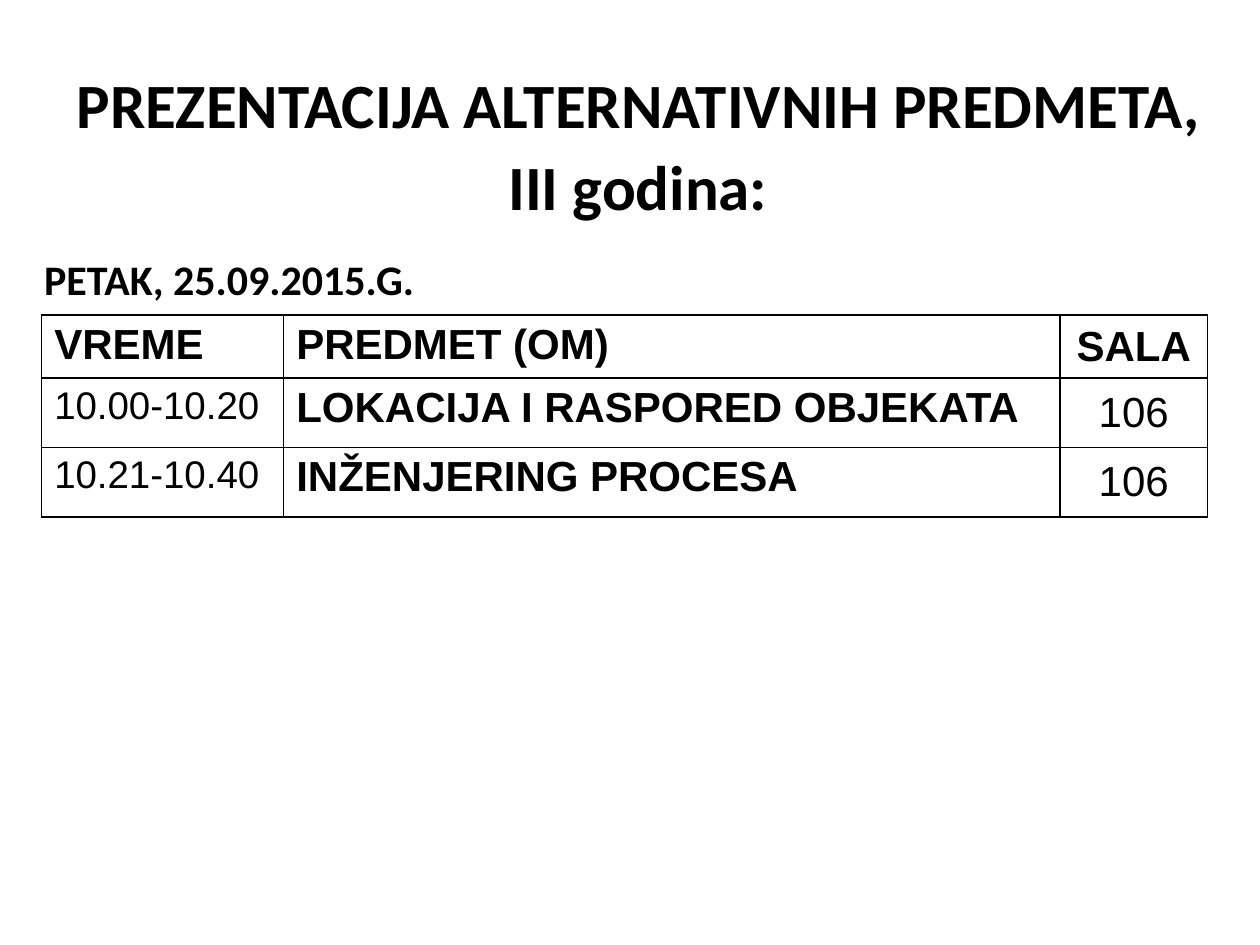
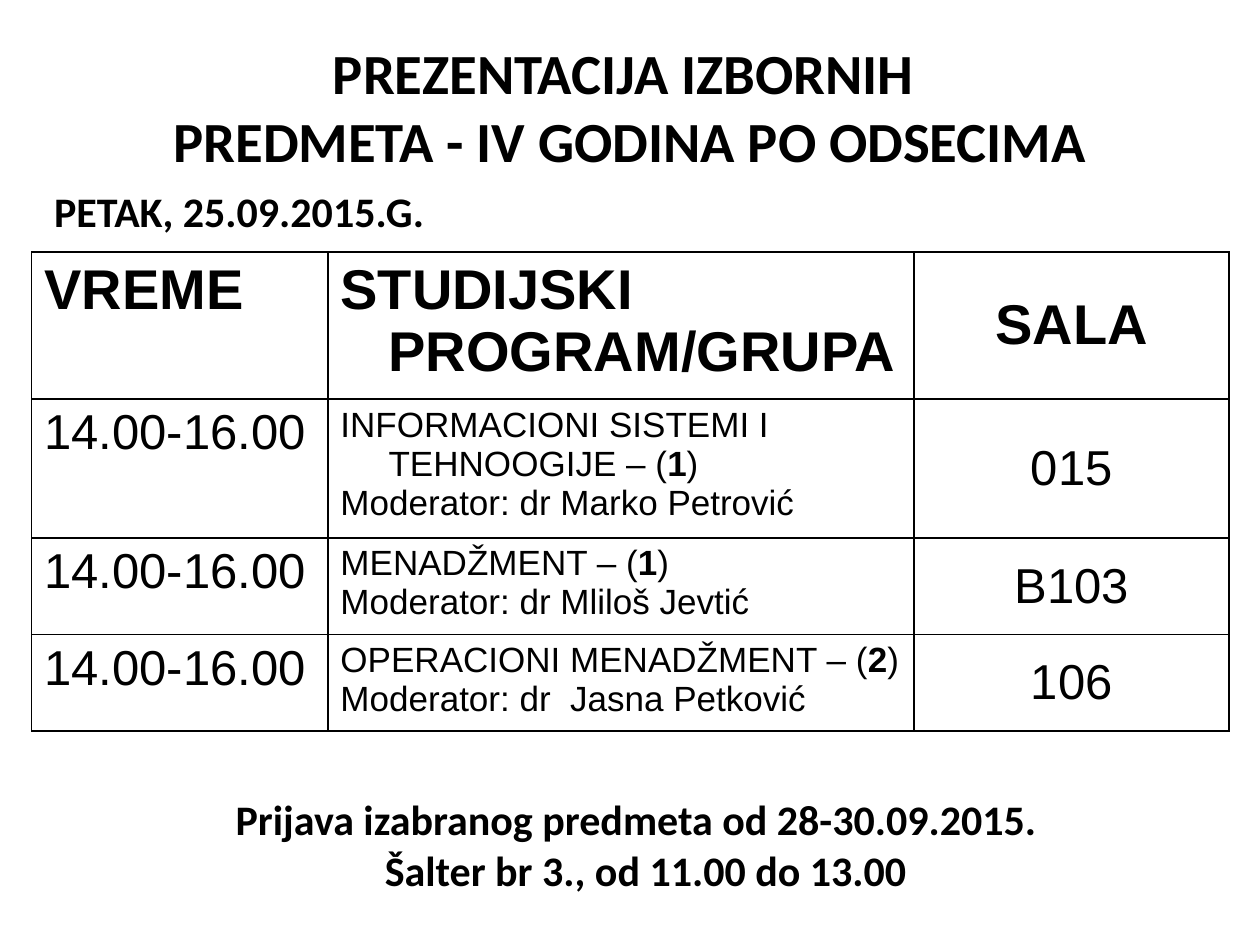
from dataclasses import dataclass

from lxml import etree
from pptx import Presentation
from pptx.dml.color import RGBColor
from pptx.enum.text import MSO_ANCHOR, PP_ALIGN
from pptx.oxml.ns import qn
from pptx.util import Cm, Pt

BLACK = RGBColor(0, 0, 0)
WHITE = RGBColor(255, 255, 255)
LEFT, CENTER = PP_ALIGN.LEFT, PP_ALIGN.CENTER
TOP, MIDDLE = MSO_ANCHOR.TOP, MSO_ANCHOR.MIDDLE
HEAD_FONT, GRID_FONT = "Calibri", "Arial"
DATE = "PETAK, 25.09.2015.G."


@dataclass
class Style:
    size: float
    bold: bool = True
    font: str = GRID_FONT
    align: int = LEFT
    anchor: int = TOP
    hang: float = 0


@dataclass
class Box:
    """Place and size in centimetres."""
    left: float
    top: float
    width: float
    height: float


@dataclass
class Grid:
    left: float
    top: float
    cols: list[float]
    rows: list[float]
    head: float              # size of the header row
    body: list[Style]        # style of each column below the header
    cells: list[list[str]]
    hang: float = 0


def write(frame, text: str, style: Style) -> None:
    """Fill a frame: \\n starts a paragraph, \\v a line, *stars* mark bold."""
    frame.word_wrap = True
    frame.vertical_anchor = style.anchor
    for num, part in enumerate(text.split("\n")):
        para = frame.add_paragraph() if num else frame.paragraphs[0]
        para.alignment = style.align
        para.font.name, para.font.size = style.font, Pt(style.size)
        para.font.bold = style.bold
        para.font.color.rgb = BLACK
        if style.hang:
            props = para._p.get_or_add_pPr()
            props.set("marL", str(Cm(style.hang)))
            props.set("indent", str(-Cm(style.hang)))
        for row, line in enumerate(part.split("\v")):
            if row:
                para.add_line_break()
            for pos, piece in enumerate(line.split("*")):
                run = para.add_run()
                run.text = piece
                if pos % 2:
                    run.font.bold = True


def add_text(slide, box: Box, text: str, style: Style):
    shape = slide.shapes.add_textbox(
        Cm(box.left), Cm(box.top), Cm(box.width), Cm(box.height))
    write(shape.text_frame, text, style)
    return shape.text_frame


def add_title(slide, box: Box, text: str, size: float):
    style = Style(size, font=HEAD_FONT, align=CENTER, anchor=MIDDLE)
    return add_text(slide, box, text, style)


def add_date(slide, left: float, top: float) -> None:
    frame = add_text(slide, Box(left, top, 8.03, 1.27), DATE,
                     Style(24, font=HEAD_FONT))
    frame.word_wrap = False


def add_border(cell) -> None:
    props = cell._tc.get_or_add_tcPr()
    for num, side in enumerate(("lnL", "lnR", "lnT", "lnB")):
        line = etree.Element(qn(f"a:{side}"), w=str(Pt(1)))
        fill = etree.SubElement(line, qn("a:solidFill"))
        etree.SubElement(fill, qn("a:srgbClr"), val=str(BLACK))
        props.insert(num, line)


def add_grid(slide, grid: Grid) -> None:
    table = slide.shapes.add_table(
        len(grid.rows), len(grid.cols), Cm(grid.left), Cm(grid.top),
        Cm(sum(grid.cols)), Cm(sum(grid.rows))).table
    table.first_row = table.horz_banding = False
    for col, width in zip(table.columns, grid.cols):
        col.width = Cm(width)
    for row, height in zip(table.rows, grid.rows):
        row.height = Cm(height)
    for r, texts in enumerate(grid.cells):
        for c, text in enumerate(texts):
            cell, base = table.cell(r, c), grid.body[c]
            style = Style(base.size if r else grid.head,
                          base.bold if r else True,
                          align=base.align, hang=grid.hang)
            write(cell.text_frame, text, style)
            cell.vertical_anchor = base.anchor
            cell.fill.background()
            add_border(cell)


def add_slide(deck):
    slide = deck.slides.add_slide(deck.slide_layouts[6])
    slide.background.fill.solid()
    slide.background.fill.fore_color.rgb = WHITE
    return slide


def room(size: float) -> Style:
    return Style(size, False, align=CENTER, anchor=MIDDLE)


THIRD = Grid(
    0.84, 6.35, [4.88, 15.65, 2.97], [1.27, 1.4, 1.4], 24,
    [Style(22, False), Style(24), room(24)],
    [["VREME", "PREDMET (OM)", "SALA"],
     ["10.00-10.20", "LOKACIJA I RASPORED OBJEKATA", "106"],
     ["10.21-10.40", "INŽENJERING PROCESA", "106"]])

FOURTH = Grid(
    0.64, 5.08, [5.97, 11.82, 6.35], [2.79, 2.62, 1.83, 1.83], 32,
    [Style(28, False), Style(20, False), room(28)],
    [["VREME", "STUDIJSKI PROGRAM/GRUPA", "SALA"],
     ["14.00-16.00", "INFORMACIONI SISTEMI I TEHNOOGIJE – (*1*)\n"
      "Moderator: dr Marko Petrović", "015"],
     ["14.00-16.00", "MENADŽMENT – (*1*)\n"
      "Moderator: dr Mliloš Jevtić", "B103"],
     ["14.00-16.00", "OPERACIONI MENADŽMENT – (*2*)\n"
      "Moderator: dr  Jasna Petković", "106"]],
    hang=0.97)


def main() -> None:
    deck = Presentation()
    deck.slide_width, deck.slide_height = Cm(25.4), Cm(19.05)

    # Third year
    slide = add_slide(deck)
    title = add_title(slide, Box(0, 0.76, 26.04, 4.32),
                      "PREZENTACIJA ALTERNATIVNIH PREDMETA, \vIII godina:", 36)
    tail = title.paragraphs[0].add_run()
    tail.text, tail.font.size = " ", Pt(40)
    add_date(slide, 0.64, 4.98)
    add_grid(slide, THIRD)

    # Fourth year
    slide = add_slide(deck)
    add_title(slide, Box(0, 0.64, 25.4, 2.97),
              "PREZENTACIJA IZBORNIH \vPREDMETA - IV GODINA PO ODSECIMA", 32.4)
    add_grid(slide, FOURTH)
    add_text(slide, Box(2.34, 15.88, 21.16, 2.31),
             "Prijava izabranog predmeta od 28-30.09.2015. \n"
             " Šalter br 3., od 11.00 do 13.00",
             Style(24, font=HEAD_FONT, align=CENTER))
    add_date(slide, 0.84, 3.61)

    deck.save("out.pptx")


if __name__ == "__main__":
    main()
